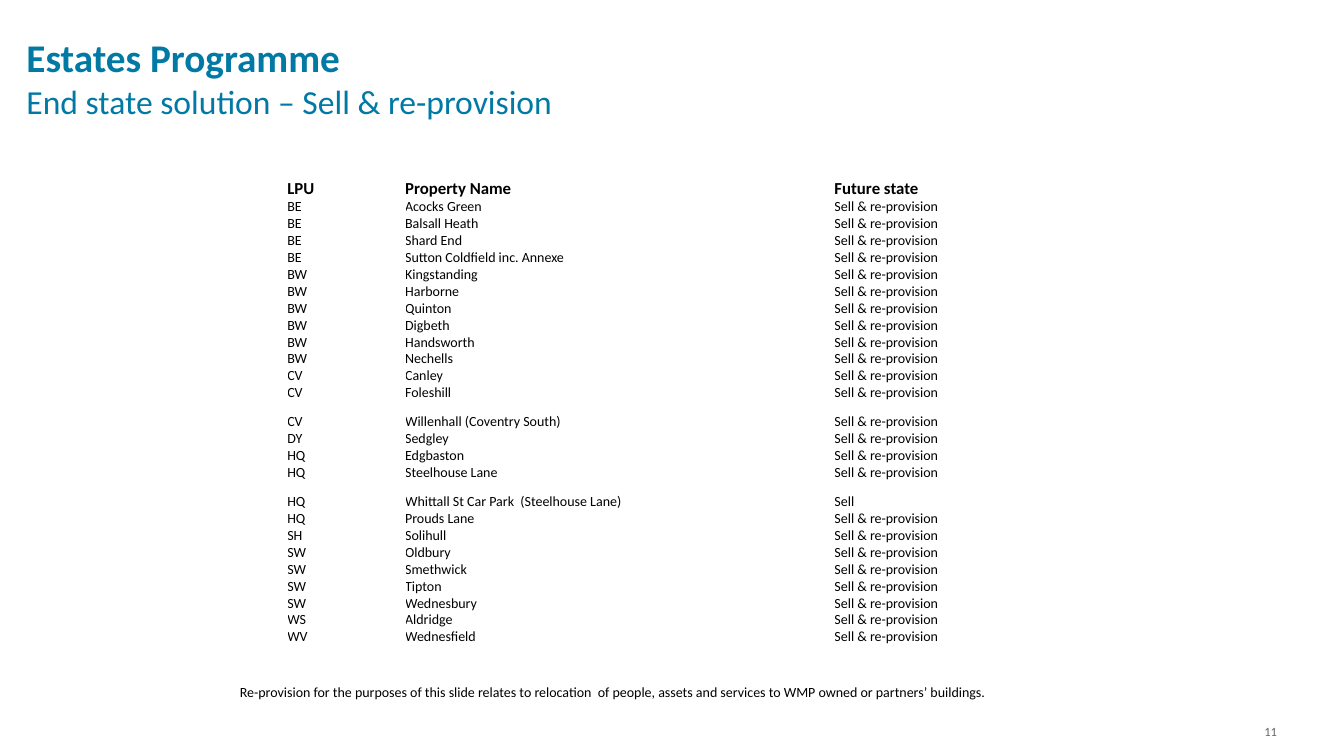
from lxml import etree
from pptx import Presentation
from pptx import util as u
from pptx.dml import color
from pptx.enum import text
from pptx.oxml import ns

PLACES = [
    ("BE", ["Acocks Green", "Balsall Heath", "Shard End",
            "Sutton Coldfield inc. Annexe"]),
    ("BW", ["Kingstanding", "Harborne", "Quinton", "Digbeth",
            "Handsworth", "Nechells"]),
    ("CV", ["Canley", "Foleshill", "Willenhall (Coventry South)"]),
    ("DY", ["Sedgley"]),
    ("HQ", ["Edgbaston", "Steelhouse Lane",
            "Whittall St Car Park  (Steelhouse Lane)", "Prouds Lane"]),
    ("SH", ["Solihull"]),
    ("SW", ["Oldbury", "Smethwick", "Tipton", "Wednesbury"]),
    ("WS", ["Aldridge"]),
    ("WV", ["Wednesfield"]),
]
TALL = (13, 17)
SOLD = 17


def tint(code):
    return color.RGBColor.from_string(code)


def apply(item, **values):
    for name, value in values.items():
        setattr(item, name, value)


class Deck:
    face = "Calibri"
    blue = "007AA5"
    black = "000000"
    grey = "666666"
    white = "FFFFFF"

    def __init__(self, slide):
        self.slide = slide

    def label(self, para, words, size, hue, bold=False):
        run = para.add_run()
        run.text = words
        apply(run.font, name=self.face, size=u.Pt(size), bold=bold)
        run.font.color.rgb = tint(hue)

    def box(self, spot, lines, hue, pad=(7.2, 3.6, 7.2, 3.6),
            anchor=text.MSO_ANCHOR.TOP, align=text.PP_ALIGN.LEFT):
        frame = self.slide.shapes.add_textbox(*map(u.Pt, spot)).text_frame
        sides = ("margin_left", "margin_top", "margin_right", "margin_bottom")
        apply(frame, word_wrap=True, vertical_anchor=anchor,
              **dict(zip(sides, map(u.Pt, pad))))
        para = frame.paragraphs[0]
        para.alignment = align
        for i, (words, size, bold) in enumerate(lines):
            if i:
                para.add_line_break()
            self.label(para, words, size, hue, bold)

    def edge(self, cell):
        props = cell._tc.get_or_add_tcPr()
        for i, side in enumerate(("lnL", "lnR", "lnT", "lnB")):
            line = etree.Element(ns.qn("a:" + side), w=str(u.Pt(1)))
            fill = etree.SubElement(line, ns.qn("a:solidFill"))
            etree.SubElement(fill, ns.qn("a:srgbClr"), val=self.white)
            props.insert(i, line)

    def grid(self, left, top, widths, heights, rows):
        spot = map(u.Pt, (left, top, sum(widths), sum(heights)))
        table = self.slide.shapes.add_table(
            len(rows), len(widths), *spot).table
        apply(table, first_row=False, horz_banding=False)
        for col, width in zip(table.columns, widths):
            col.width = u.Pt(width)
        for r, (height, row) in enumerate(zip(heights, rows)):
            table.rows[r].height = u.Pt(height)
            for c, words in enumerate(row):
                cell = table.cell(r, c)
                apply(cell, margin_left=0, margin_top=0, margin_right=0,
                      margin_bottom=0, vertical_anchor=text.MSO_ANCHOR.BOTTOM)
                cell.fill.solid()
                cell.fill.fore_color.rgb = tint(self.white)
                self.edge(cell)
                self.label(cell.text_frame.paragraphs[0], words,
                           10 if r else 12, self.black, not r)


def main():
    show = Presentation()
    apply(show, slide_width=u.Pt(960), slide_height=u.Pt(540))
    deck = Deck(show.slides.add_slide(show.slide_layouts[6]))

    deck.box((854.6, 517.7, 57.6, 10), [("11", 9, False)], deck.grey,
             (7.2, 3.6, 0, 3.6), text.MSO_ANCHOR.MIDDLE, text.PP_ALIGN.RIGHT)
    deck.box((18.9, 0, 864, 86.4),
             [("Estates Programme", 28, True),
              ("End state solution – Sell & re-provision", 24, False)],
             deck.blue, (0, 3.6, 0, 0), text.MSO_ANCHOR.BOTTOM)

    rows = [("LPU", "Property Name", "Future state")]
    for unit, names in PLACES:
        for name in names:
            state = "Sell" if len(rows) == SOLD else "Sell & re-provision"
            rows.append((unit, name, state))
    heights = [20.8 if r in TALL else 12.1 for r in range(len(rows))]
    deck.grid(205.2, 127.4, (84.2, 306.7, 153.4), heights, rows)

    note = ("Re-provision for the purposes of this slide relates to relocation"
            "  of people, assets and services to WMP owned or partners’"
            " buildings.")
    deck.box((164.2, 484.6, 610.6, 19.4), [(note, 10, False)], deck.black)
    show.save("out.pptx")


if __name__ == "__main__":
    main()
